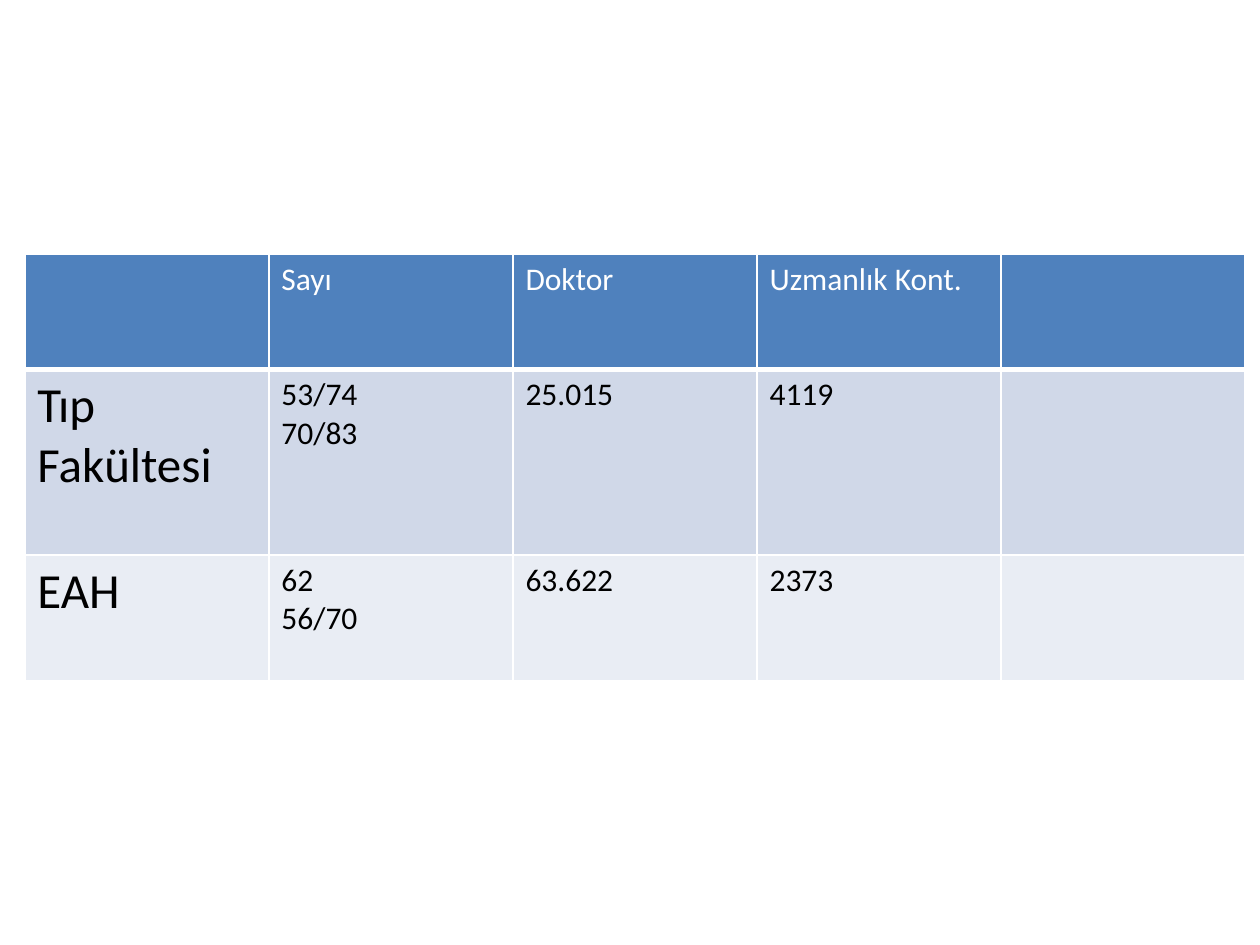
from dataclasses import dataclass

from lxml import etree
from pptx import Presentation
from pptx.dml.color import RGBColor
from pptx.oxml import ns
from pptx.util import Cm, Pt


@dataclass(frozen=True)
class Theme:
    font: str = "Calibri"
    size: int = 18
    large: int = 28
    light: str = "FFFFFF"
    dark: str = "000000"
    head: str = "4F81BD"
    bands: tuple = ("D0D8E8", "E9EDF4")
    line: int = 1
    rule: int = 3


THEME = Theme()
ROWS = [
    ["", "Sayı", "Doktor", "Uzmanlık Kont.", ""],
    ["Tıp Fakültesi", "53/74\n70/83", "25.015", "4119", ""],
    ["EAH", "62\n56/70", "63.622", "2373", ""],
]
HEIGHTS = [2.32, 3.74, 2.54]
WIDTH = 4.92


def add_edges(cell, base):
    """Draw the four cell borders; base is the width of the bottom one."""
    props = cell._tc.get_or_add_tcPr()
    widths = {"L": THEME.line, "R": THEME.line, "T": THEME.line, "B": base}
    for side, width in widths.items():
        edge = etree.SubElement(props, ns.qn(f"a:ln{side}"), w=str(Pt(width)))
        fill = etree.SubElement(edge, ns.qn("a:solidFill"))
        etree.SubElement(fill, ns.qn("a:srgbClr"), val=THEME.light)


def fill_cell(cell, words, row, col):
    head = row == 0
    add_edges(cell, THEME.rule if head else THEME.line)
    cell.fill.solid()
    shade = THEME.head if head else THEME.bands[(row - 1) % 2]
    cell.fill.fore_color.rgb = RGBColor.from_string(shade)
    cell.text = words
    for para in cell.text_frame.paragraphs:
        font = para.font
        font.name = THEME.font
        font.size = Pt(THEME.large if col == 0 and not head else THEME.size)
        font.bold = False
        font.color.rgb = RGBColor.from_string(THEME.light if head else THEME.dark)


def add_grid(slide, left, top):
    count = len(ROWS[0])
    frame = slide.shapes.add_table(
        len(ROWS), count, Cm(left), Cm(top), Cm(WIDTH * count), Cm(sum(HEIGHTS))
    )
    table = frame.table
    for column in table.columns:
        column.width = Cm(WIDTH)
    for row, (height, line) in enumerate(zip(HEIGHTS, ROWS)):
        table.rows[row].height = Cm(height)
        for col, words in enumerate(line):
            fill_cell(table.cell(row, col), words, row, col)


def main():
    deck = Presentation()
    deck.slide_width, deck.slide_height = Cm(25.4), Cm(19.05)
    slide = deck.slides.add_slide(deck.slide_layouts[6])
    add_grid(slide, 0.5, 5.13)
    deck.save("out.pptx")


if __name__ == "__main__":
    main()
